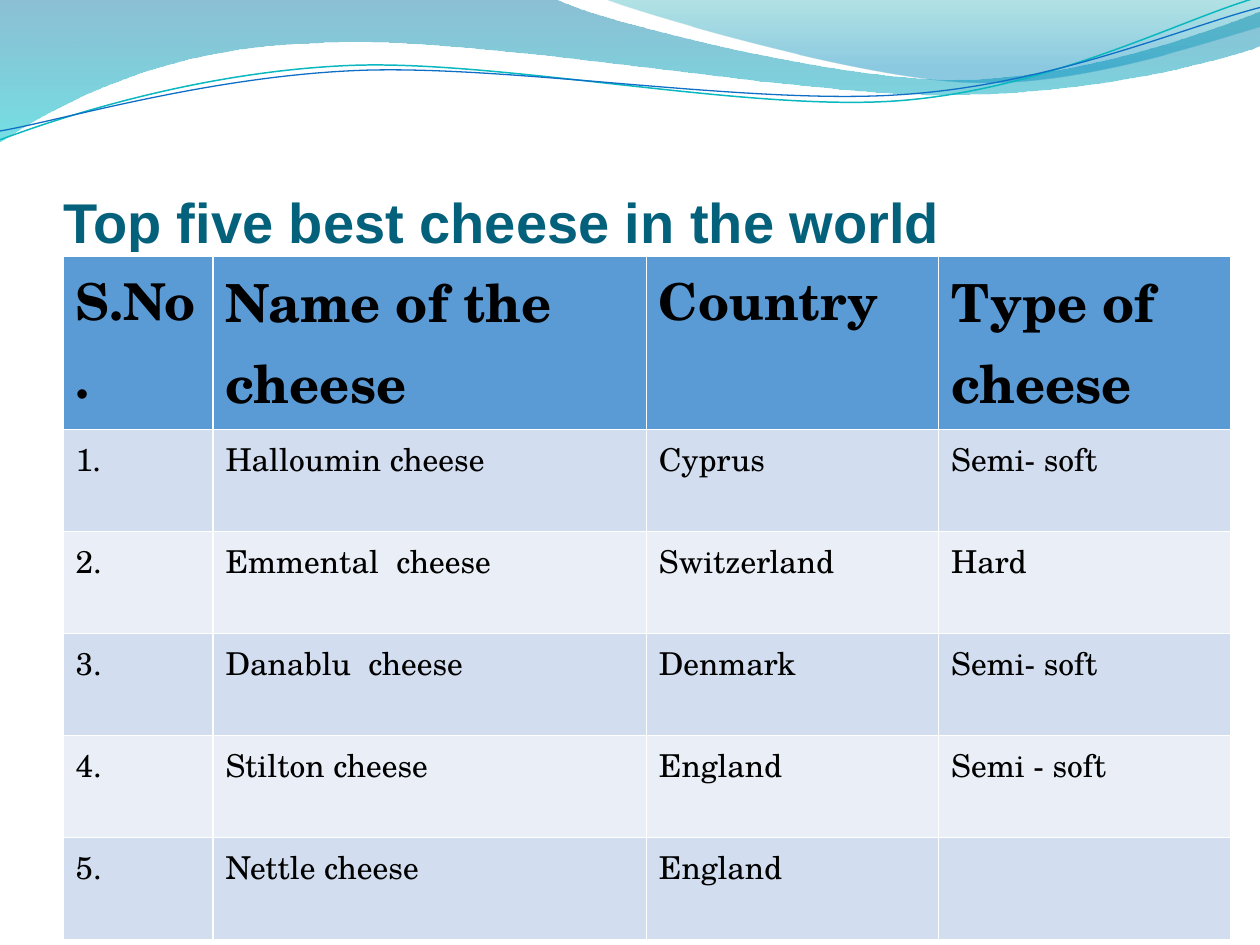
from dataclasses import dataclass
from math import cos, radians, sin
from typing import Optional

from lxml.etree import SubElement
from pptx import Presentation
from pptx.dml.color import RGBColor as RGB
from pptx.enum.text import MSO_ANCHOR as Anchor, MSO_AUTO_SIZE as AutoSize, PP_ALIGN as Align
from pptx.oxml.ns import qn
from pptx.util import Inches, Pt

COLORS = {
    "title": "04617B", "text": "000000", "border": "FFFFFF",
    "header": "5B9BD5", "odd": "D2DEEF", "even": "EAEFF7",
    "deep": "0074A1", "aqua": "00C6CF", "teal": "00A1A9", "sky": "008BBF",
    "teal_line": "0AB8BF", "blue_line": "0F6FC6",
}
TILT = 2.7
Point = tuple[float, float]


@dataclass
class Stop:
    color: str
    position: float
    alpha: int


@dataclass
class Wave:
    start: Point
    segments: list[tuple[float, ...]]
    stops: tuple[Stop, ...] = ()
    line: Optional[str] = None
    width: float = 0
    pivot: Optional[Point] = None


WAVES = [
    Wave((0, 0), [
        (4.4, -0.01), (4.76, 0.17, 6.64, 0.63, 7.58, 0.63),
        (8.53, 0.63, 9.58, 0.26, 10, 0.09), (10.01, 0.36),
        (9.83, 0.44, 8.7, 0.76, 7.46, 0.75), (6.22, 0.75, 3.82, 0.28, 2.57, 0.34),
        (1.29, 0.36, 0.46, 0.83, -0.01, 1.13), (0, 0),
    ], stops=(Stop("deep", 0, 45), Stop("aqua", 1, 55))),
    Wave((4.79, -0.01), [
        (5.09, 0.11, 6.82, 0.62, 7.69, 0.65), (8.56, 0.69, 9.61, 0.32, 10, 0.21),
        (10, 0), (4.79, -0.01),
    ], stops=(Stop("teal", 0, 30), Stop("sky", 0.8, 45))),
    Wave((0, 1.11), [
        (0.48, 0.93, 1.58, 0.57, 2.77, 0.52), (3.95, 0.47, 5.93, 0.89, 7.13, 0.8),
        (8.33, 0.71, 9.38, 0.15, 9.98, -0.02),
    ], line="teal_line", width=0.85, pivot=(4.99, 0.57)),
    Wave((0, 1.04), [
        (0.47, 0.96, 1.64, 0.61, 2.83, 0.56), (4.03, 0.51, 5.97, 0.84, 7.17, 0.75),
        (8.36, 0.67, 9.41, 0.21, 10, 0.06),
    ], line="blue_line", width=0.75, pivot=(5, 0.59)),
]

HEADINGS = ["S.No.", "Name of the cheese", "Country", "Type of cheese"]
HEADING_SIZES = [29, 30, 29, 30]
COLUMN_WIDTHS = [1.19, 3.44, 2.32, 2.32]
ROW_HEIGHT = 0.81
CHEESES = [
    ["1.", "Halloumin cheese", "Cyprus", "Semi- soft"],
    ["2.", "Emmental  cheese", "Switzerland", "Hard"],
    ["3.", "Danablu  cheese", "Denmark", "Semi- soft"],
    ["4.", "Stilton cheese", "England", "Semi - soft"],
    ["5.", "Nettle cheese", "England", ""],
]


def rgb(name: str) -> RGB:
    return RGB.from_string(COLORS[name])


def turn(point: Point, pivot: Point, degrees: float) -> Point:
    angle = radians(degrees)
    dx, dy = point[0] - pivot[0], point[1] - pivot[1]
    return (pivot[0] + dx * cos(angle) - dy * sin(angle),
            pivot[1] + dx * sin(angle) + dy * cos(angle))


def place(wave: Wave, numbers: tuple[float, ...]) -> list[tuple[int, int]]:
    points = list(zip(numbers[::2], numbers[1::2]))
    if wave.pivot:
        points = [turn(point, wave.pivot, TILT) for point in points]
    return [(Inches(x), Inches(y)) for x, y in points]


def bend(shape, segments: list[list[tuple[int, int]]]) -> None:
    lines = list(shape.element.spPr.iter(qn("a:lnTo")))
    for line, points in zip(lines, segments):
        if len(points) == 1:
            continue
        line.tag = qn("a:cubicBezTo")
        for control, (x, y) in enumerate(points[:-1]):
            point = SubElement(line, qn("a:pt"), x=str(x - shape.left), y=str(y - shape.top))
            line.insert(control, point)


def draw_wave(slide, wave: Wave) -> None:
    segments = [place(wave, segment) for segment in wave.segments]
    builder = slide.shapes.build_freeform(*place(wave, wave.start)[0])
    builder.add_line_segments([points[-1] for points in segments], close=bool(wave.stops))
    shape = builder.convert_to_shape()
    bend(shape, segments)
    shape.shadow.inherit = False
    if wave.pivot:
        shape.rotation = 360 - TILT
    if wave.line:
        shape.fill.background()
        shape.line.color.rgb = rgb(wave.line)
        shape.line.width = Pt(wave.width)
        return
    shape.line.fill.background()
    shape.fill.gradient()
    shape.fill.gradient_angle = 270
    for gradient_stop, stop in zip(shape.fill.gradient_stops, wave.stops):
        gradient_stop.color.rgb = rgb(stop.color)
        gradient_stop.position = stop.position
    for color, stop in zip(shape.element.spPr.iter(qn("a:srgbClr")), wave.stops):
        SubElement(color, qn("a:alpha"), val=str(stop.alpha * 1000))


def draw_title(slide) -> None:
    title = slide.shapes.title
    title.left, title.top = Inches(0.5), Inches(0.77)
    title.width, title.height = Inches(9.08), Inches(1.25)
    frame = title.text_frame
    frame.text = "Top five best cheese in the world"
    frame.auto_size = AutoSize.NONE
    frame.vertical_anchor = Anchor.BOTTOM
    frame.margin_left = frame.margin_right = frame.margin_bottom = 0
    frame.margin_top = Inches(0.05)
    heading = frame.paragraphs[0]
    heading.alignment = Align.LEFT
    heading.font.name, heading.font.size, heading.font.bold = "Arial", Pt(32), True
    heading.font.color.rgb = rgb("title")


def style_cell(cell, text: str, fill: str, size: int, header: bool) -> None:
    properties = cell._tc.get_or_add_tcPr()
    for side in "LRTB":
        width = 3 if header and side == "T" else 1
        border = SubElement(properties, qn(f"a:ln{side}"), w=str(Pt(width)))
        SubElement(SubElement(border, qn("a:solidFill")), qn("a:srgbClr"), val=COLORS["border"])
    cell.fill.solid()
    cell.fill.fore_color.rgb = rgb(fill)
    cell.text = text
    font = cell.text_frame.paragraphs[0].font
    font.name, font.size, font.bold = "TeX Gyre Schola", Pt(size), header
    font.color.rgb = rgb("text")


def draw_table(slide) -> None:
    rows = [HEADINGS, *CHEESES]
    table = slide.shapes.add_table(
        len(rows), len(HEADINGS), Inches(0.5), Inches(2.02),
        Inches(sum(COLUMN_WIDTHS)), Inches(ROW_HEIGHT * len(rows))).table
    for column, width in zip(table.columns, COLUMN_WIDTHS):
        column.width = Inches(width)
    for r, texts in enumerate(rows):
        table.rows[r].height = Inches(ROW_HEIGHT)
        fill = "header" if r == 0 else "odd" if r % 2 else "even"
        for c, text in enumerate(texts):
            size = HEADING_SIZES[c] if r == 0 else 18
            style_cell(table.cell(r, c), text, fill, size, r == 0)


def main() -> None:
    """Build the slide on the world's five best cheeses."""
    deck = Presentation()
    deck.slide_width, deck.slide_height = Inches(10), Inches(7.5)
    slide = deck.slides.add_slide(deck.slide_layouts[5])
    for wave in WAVES:
        draw_wave(slide, wave)
    draw_title(slide)
    draw_table(slide)
    deck.save("out.pptx")


if __name__ == "__main__":
    main()
